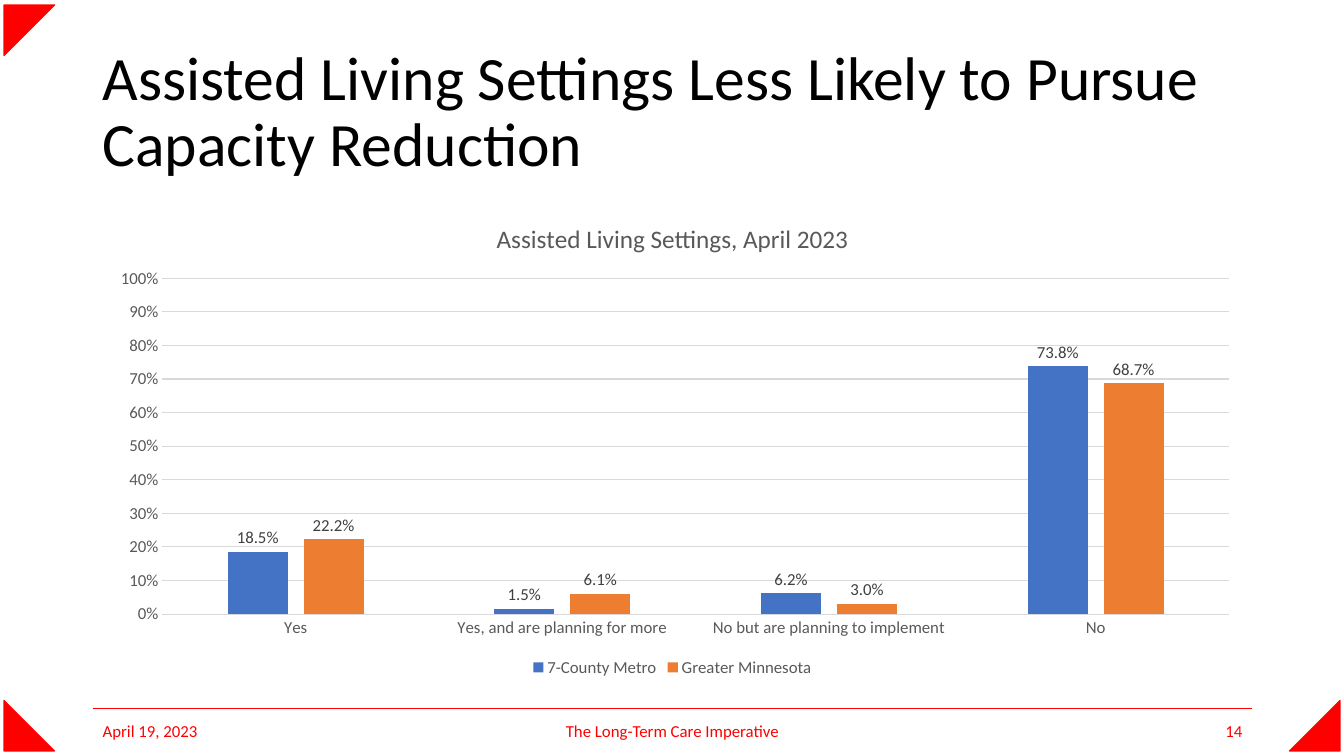
from dataclasses import dataclass

from lxml import etree
from pptx import Presentation
from pptx.chart.data import CategoryChartData
from pptx.dml.color import RGBColor
from pptx.enum.chart import XL_CHART_TYPE as ChartType
from pptx.enum.chart import XL_LABEL_POSITION as LabelPos
from pptx.enum.chart import XL_LEGEND_POSITION as LegendPos
from pptx.enum.chart import XL_TICK_MARK as Tick
from pptx.enum.shapes import MSO_CONNECTOR as Connector
from pptx.enum.shapes import MSO_SHAPE as Shape
from pptx.enum.text import MSO_ANCHOR as Anchor
from pptx.enum.text import PP_ALIGN as Align
from pptx.oxml.ns import qn
from pptx.util import Inches, Pt


@dataclass(frozen=True)
class Theme:
    font: str = "Calibri"
    accent: str = "FF0000"
    title: str = "000000"
    chart_text: str = "595959"
    label: str = "404040"
    grid: str = "D9D9D9"
    series: tuple = ("4472C4", "ED7D31")
    title_size: int = 44
    chart_title_size: int = 18
    small_size: int = 12


THEME = Theme()
WIDTH, HEIGHT = 13.33, 7.5
LEFT, CONTENT_WIDTH = 0.92, 11.5

CATEGORIES = ("Yes", "Yes, and are planning for more",
              "No but are planning to implement", "No")
SERIES = {
    "7-County Metro": (0.185, 0.015, 0.062, 0.738),
    "Greater Minnesota": (0.222, 0.061, 0.03, 0.687),
}


def rgb(value):
    return RGBColor.from_string(value)


def style_font(font, size, color):
    font.name = THEME.font
    font.size = Pt(size)
    font.bold = False
    font.color.rgb = rgb(color)


def style_line(line, color, width):
    line.color.rgb = rgb(color)
    line.width = Pt(width)


def add_text(slide, box, text, size, color, align=Align.LEFT, spacing=1.0):
    tf = slide.shapes.add_textbox(*map(Inches, box)).text_frame
    tf.word_wrap = True
    tf.vertical_anchor = Anchor.MIDDLE
    p = tf.paragraphs[0]
    p.text = text
    p.alignment = align
    p.line_spacing = spacing
    style_font(p.runs[0].font, size, color)


def add_corners(slide, box, size=0.5):
    """Put a right triangle in three corners of the box."""
    left, top, width, height = box
    right, bottom = left + width - size, top + height - size
    for x, y, angle in ((left, top, 90), (right, bottom, 270), (left, bottom, 0)):
        sp = slide.shapes.add_shape(Shape.RIGHT_TRIANGLE, *map(Inches, (x, y, size, size)))
        sp.rotation = angle
        sp.shadow.inherit = False
        sp.fill.solid()
        sp.fill.fore_color.rgb = rgb(THEME.accent)
        style_line(sp.line, THEME.accent, 1)


def add_footer(slide, box):
    left, top, width, height = box
    rule = slide.shapes.add_connector(
        Connector.STRAIGHT, *map(Inches, (left, top, left + width, top)))
    style_line(rule.line, THEME.accent, 0.5)
    etree.SubElement(rule._element.spPr, qn("a:effectLst"))

    side, middle = 3, 4.5
    parts = (
        ("April 19, 2023", left, side, Align.LEFT),
        ("The Long-Term Care Imperative", left + (width - middle) / 2, middle, Align.CENTER),
        ("14", left + width - side, side, Align.RIGHT),
    )
    for text, x, part_width, align in parts:
        add_text(slide, (x, top + 0.02, part_width, height - 0.02), text,
                 THEME.small_size, THEME.accent, align)


def set_plot_layout(chart, x, y, w, h):
    """Fix the inner plot area, in fractions of the chart."""
    plot_area = chart._chartSpace.chart.plotArea
    for old in plot_area.findall(qn("c:layout")):
        plot_area.remove(old)
    layout = etree.Element(qn("c:layout"))
    plot_area.insert(0, layout)
    manual = etree.SubElement(layout, qn("c:manualLayout"))
    settings = {"layoutTarget": "inner", "xMode": "edge", "yMode": "edge",
                "x": x, "y": y, "w": w, "h": h}
    for name, value in settings.items():
        etree.SubElement(manual, qn(f"c:{name}")).set("val", str(value))


def style_axes(chart):
    for axis in (chart.category_axis, chart.value_axis):
        axis.major_tick_mark = axis.minor_tick_mark = Tick.NONE
        style_font(axis.tick_labels.font, THEME.small_size, THEME.chart_text)
    chart.category_axis.has_major_gridlines = False
    style_line(chart.category_axis.format.line, THEME.grid, 0.75)

    values = chart.value_axis
    values.minimum_scale, values.maximum_scale, values.major_unit = 0, 1, 0.1
    values.tick_labels.number_format = "0%"
    values.tick_labels.number_format_is_linked = False
    values.format.line.fill.background()
    values.has_major_gridlines = True
    style_line(values.major_gridlines.format.line, THEME.grid, 0.75)


def style_series(series, color):
    series.format.fill.solid()
    series.format.fill.fore_color.rgb = rgb(color)
    series.invert_if_negative = False
    labels = series.data_labels
    labels.show_value = True
    labels.position = LabelPos.OUTSIDE_END
    labels.number_format = "0.0%"
    labels.number_format_is_linked = False
    style_font(labels.font, THEME.small_size, THEME.label)


def add_capacity_chart(slide, box):
    data = CategoryChartData(number_format="0.0%")
    data.categories = CATEGORIES
    for name, values in SERIES.items():
        data.add_series(name, values)
    chart = slide.shapes.add_chart(
        ChartType.COLUMN_CLUSTERED, *map(Inches, box), data).chart
    style_font(chart.font, THEME.small_size, THEME.chart_text)

    chart.has_title = True
    p = chart.chart_title.text_frame.paragraphs[0]
    p.text = "Assisted Living Settings, April 2023"
    style_font(p.runs[0].font, THEME.chart_title_size, THEME.chart_text)
    chart.chart_title.include_in_layout = False

    chart.has_legend = True
    chart.legend.position = LegendPos.BOTTOM
    chart.legend.include_in_layout = False
    style_font(chart.legend.font, THEME.small_size, THEME.chart_text)

    plot = chart.plots[0]
    plot.gap_width, plot.overlap = 219, -27
    plot.vary_by_categories = False
    for series, color in zip(plot.series, THEME.series):
        style_series(series, color)
    style_axes(chart)
    set_plot_layout(chart, 0.06, 0.16, 0.92, 0.7)


def main():
    prs = Presentation()
    prs.slide_width, prs.slide_height = Inches(WIDTH), Inches(HEIGHT)
    slide = prs.slides.add_slide(prs.slide_layouts[6])
    add_corners(slide, (0.04, 0.05, WIDTH - 0.08, HEIGHT - 0.1))
    add_text(slide, (LEFT, 0.4, CONTENT_WIDTH, 1.45),
             "Assisted Living Settings Less Likely to Pursue Capacity Reduction",
             THEME.title_size, THEME.title, spacing=0.9)
    add_capacity_chart(slide, (LEFT, 2, CONTENT_WIDTH, 4.76))
    add_footer(slide, (LEFT, 7.03, CONTENT_WIDTH, 0.42))
    prs.save("out.pptx")


if __name__ == "__main__":
    main()
